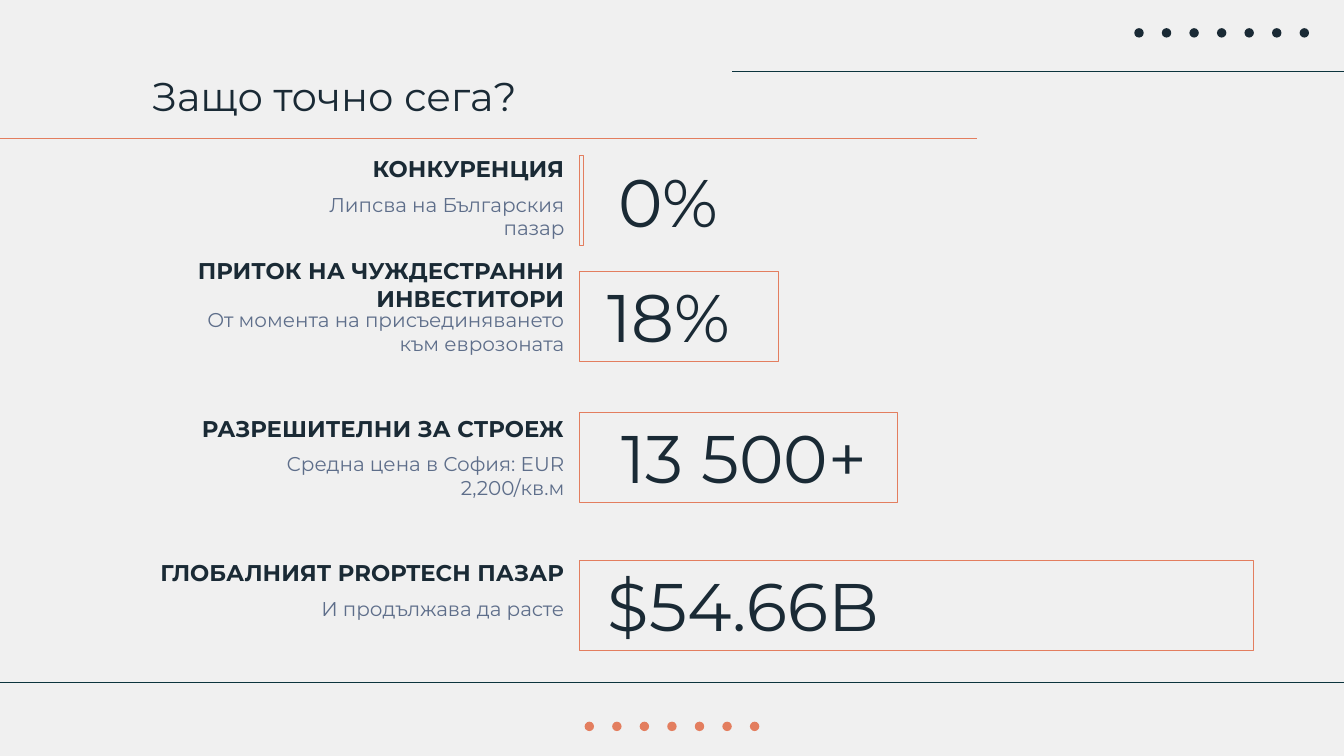
import pptx
import pptx.util
import pptx.dml.color
import pptx.enum.shapes
import pptx.enum.text
import lxml.etree

Inches = pptx.util.Inches
RGBColor = pptx.dml.color.RGBColor
SHAPE = pptx.enum.shapes.MSO_SHAPE
ALIGN = pptx.enum.text.PP_ALIGN
ANCHOR = pptx.enum.text.MSO_ANCHOR

BACKGROUND = RGBColor(0xF0, 0xF0, 0xF0)
NAVY = RGBColor(0x1A, 0x2A, 0x35)
TEAL = RGBColor(0x0C, 0x34, 0x3D)
ORANGE = RGBColor(0xE3, 0x7E, 0x5F)
SLATE = RGBColor(0x5E, 0x6E, 0x8A)
FONT = "Montserrat"

BAR_LEFT = 4.31
BAR_HEIGHT = 0.67
TEXT_EDGE = 4.28  # labels and notes end here
FIGURE_LEFT = 4.29
DOT_SIZE = 0.07
DOT_STEP = 0.205
DOT_COUNT = 7

# bar top, bar width, label, label top, label width,
# note, note top, note width, figure, figure width
METRICS = [
    (1.16, 0.03, "КОНКУРЕНЦИЯ", 1.16, 2.68,
     "Липсва на Българския пазар", 1.35, 2.32, "0%", 1.37),
    (2.02, 1.48, "ПРИТОК НА ЧУЖДЕСТРАННИ ИНВЕСТИТОРИ", 2.02, 3.64,
     "От момента на присъединяването към еврозоната", 2.21, 2.99, "18%", 1.37),
    (3.07, 2.37, "РАЗРЕШИТЕЛНИ ЗА СТРОЕЖ", 3.09, 3.23,
     "Средна цена в София: EUR 2,200/кв.м", 3.28, 2.32, "13 500+", 2.5),
    (4.17, 5.02, "ГЛОБАЛНИЯТ PROPTECH ПАЗАР", 4.16, 3.36,
     "И продължава да расте", 4.36, 2.32, "$54.66B", 2.48),
]


def add_rule(slide, start, end, top, color):
    rule = slide.shapes.add_connector(
        pptx.enum.shapes.MSO_CONNECTOR.STRAIGHT,
        Inches(start), Inches(top), Inches(end), Inches(top))
    rule.line.color.rgb = color
    rule.line.width = pptx.util.Pt(0.75)
    properties = rule._element.spPr
    lxml.etree.SubElement(properties, pptx.oxml.ns.qn("a:effectLst"))


def add_dots(slide, left, top, color):
    for index in range(DOT_COUNT):
        dot = slide.shapes.add_shape(
            SHAPE.OVAL, Inches(left + index * DOT_STEP), Inches(top),
            Inches(DOT_SIZE), Inches(DOT_SIZE))
        dot.shadow.inherit = False
        dot.fill.solid()
        dot.fill.fore_color.rgb = color
        dot.line.fill.background()


def add_bar(slide, top, width):
    bar = slide.shapes.add_shape(
        SHAPE.RECTANGLE, Inches(BAR_LEFT), Inches(top),
        Inches(width), Inches(BAR_HEIGHT))
    bar.shadow.inherit = False
    bar.fill.background()
    bar.line.color.rgb = ORANGE
    bar.line.width = pptx.util.Pt(0.61)


def add_text(slide, text, left, top, width, height, size, color=NAVY,
             align=ALIGN.LEFT, anchor=ANCHOR.TOP, bold=False, inset=0.08):
    box = slide.shapes.add_textbox(
        Inches(left), Inches(top), Inches(width), Inches(height))
    frame = box.text_frame
    frame.word_wrap = True
    frame.vertical_anchor = anchor
    frame.margin_left = frame.margin_right = Inches(inset)
    frame.margin_top = frame.margin_bottom = Inches(inset)
    paragraph = frame.paragraphs[0]
    paragraph.text = text
    paragraph.alignment = align
    paragraph.font.name = FONT
    paragraph.font.size = pptx.util.Pt(size)
    paragraph.font.bold = bold
    paragraph.font.color.rgb = color


def add_metric(slide, top, bar_width, label, label_top, label_width,
               note, note_top, note_width, figure, figure_width):
    add_bar(slide, top, bar_width)
    add_text(slide, note, TEXT_EDGE - note_width, note_top, note_width, 0.49,
             10.65, color=SLATE, align=ALIGN.RIGHT)
    add_text(slide, figure, FIGURE_LEFT, top + 0.07, figure_width, 0.52,
             36, align=ALIGN.CENTER, anchor=ANCHOR.MIDDLE)
    add_text(slide, label, TEXT_EDGE - label_width, label_top, label_width, 0.19,
             12.25, align=ALIGN.RIGHT, anchor=ANCHOR.MIDDLE, bold=True)


def main():
    presentation = pptx.Presentation()
    presentation.slide_width = Inches(10)
    presentation.slide_height = Inches(10) * 9 // 16
    slide = presentation.slides.add_slide(presentation.slide_layouts[6])
    slide.background.fill.solid()
    slide.background.fill.fore_color.rgb = BACKGROUND

    # Frame: rules and rows of dots
    add_rule(slide, -0.61, 10.2, 5.08, TEAL)
    add_dots(slide, 4.35, 5.37, ORANGE)
    add_rule(slide, 5.45, 10.1, 0.53, TEAL)
    add_dots(slide, 8.44, 0.21, NAVY)

    # Heading
    add_text(slide, "Защо точно сега?", 1.03, 0.43, 7.35, 0.54, 21.5, inset=0.1)
    add_rule(slide, -0.16, 7.27, 1.03, ORANGE)

    # Metrics
    for metric in METRICS:
        add_metric(slide, *metric)

    presentation.save("out.pptx")


if __name__ == "__main__":
    main()
